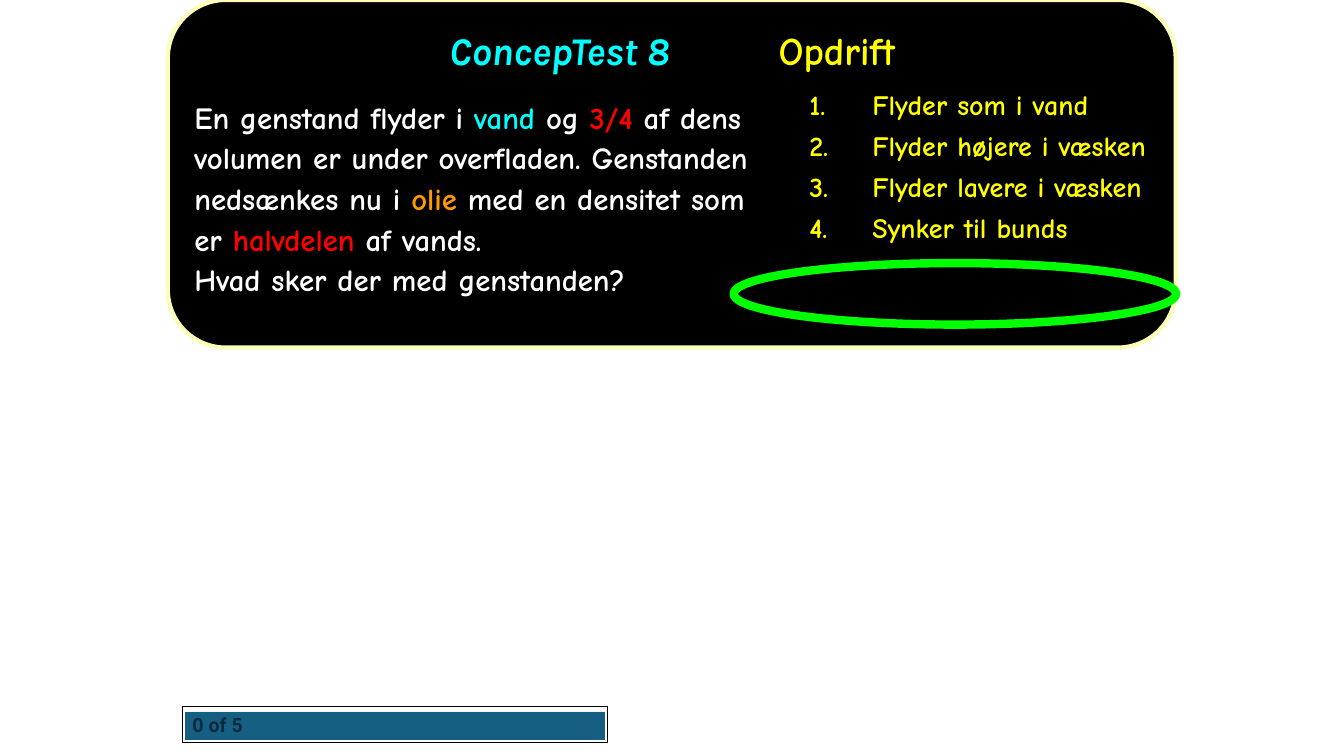
"""Build the ConcepTest 8 slide about buoyancy."""
import pptx
import pptx.dml.color
import pptx.enum.dml
import pptx.enum.shapes
import pptx.enum.text
import pptx.oxml.ns
import pptx.util
import lxml.etree

Cm = pptx.util.Cm
Pt = pptx.util.Pt
RGBColor = pptx.dml.color.RGBColor
SHAPE = pptx.enum.shapes.MSO_SHAPE
ANCHOR = pptx.enum.text.MSO_ANCHOR
AUTO_SIZE = pptx.enum.text.MSO_AUTO_SIZE
LEFT = pptx.enum.text.PP_ALIGN.LEFT

BLACK = RGBColor(0x00, 0x00, 0x00)
WHITE = RGBColor(0xFF, 0xFF, 0xFF)
CREAM = RGBColor(0xFC, 0xFE, 0xB9)
CYAN = RGBColor(0x00, 0xFF, 0xFF)
YELLOW = RGBColor(0xFF, 0xFF, 0x00)
RED = RGBColor(0xFF, 0x00, 0x00)
ORANGE = RGBColor(0xFF, 0x99, 0x00)
GREEN = RGBColor(0x00, 0xFF, 0x00)
TEAL = RGBColor(0x15, 0x60, 0x82)
NAVY = RGBColor(0x0E, 0x28, 0x41)

HEADING = {"name": "Karla", "size": Pt(28), "bold": True, "italic": True}
TOPIC = {"name": "Comic Neue", "size": Pt(28), "bold": True, "italic": False}
QUESTION = {"name": "Comic Neue", "size": Pt(22), "bold": True}
ANSWER = {"name": "Comic Neue", "size": Pt(20), "bold": True}
COUNTER = {"name": "Roboto", "size": Pt(14), "bold": True}


def set_all(target, values):
    for name, value in values.items():
        setattr(target, name, value)


class ConcepTest:
    def __init__(self, deck):
        self.slide = deck.slides.add_slide(deck.slide_layouts[1])

    def add_runs(self, paragraph, runs, **layout):
        set_all(paragraph, {"alignment": LEFT, **layout})
        for text, style, color in runs:
            run = paragraph.add_run()
            run.text = text
            set_all(run.font, style)
            run.font.color.rgb = color

    def add_property(self, parent, tag, **attributes):
        return lxml.etree.SubElement(parent, pptx.oxml.ns.qn(tag), attributes)

    def placeholder(self, index, box, **frame):
        holder = self.slide.placeholders[index]
        set_all(holder, dict(zip(("left", "top", "width", "height"), map(Cm, box))))
        set_all(holder.text_frame, {"auto_size": AUTO_SIZE.NONE, **frame})
        holder.element.getparent().append(holder.element)
        return holder.text_frame

    def title(self, box, heading, topic, inset, tab):
        frame = self.placeholder(0, box, vertical_anchor=ANCHOR.MIDDLE, margin_left=Cm(inset))
        paragraph = frame.paragraphs[0]
        stops = self.add_property(paragraph._p.get_or_add_pPr(), "a:tabLst")
        self.add_property(stops, "a:tab", pos=str(Cm(tab)), algn="l")
        self.add_runs(paragraph, [(heading + "\t", HEADING, CYAN), (topic, TOPIC, YELLOW)],
                      line_spacing=0.9)

    def answers(self, box, choices, indent):
        frame = self.placeholder(1, box, vertical_anchor=ANCHOR.TOP)
        for number, choice in enumerate(choices):
            paragraph = frame.add_paragraph() if number else frame.paragraphs[0]
            properties = paragraph._p.get_or_add_pPr()
            properties.set("marL", str(Cm(indent)))
            properties.set("indent", str(-Cm(indent)))
            self.add_property(properties, "a:buAutoNum", type="arabicPeriod")
            self.add_runs(paragraph, [(choice, ANSWER, YELLOW)], line_spacing=0.8,
                          space_before=Pt(10 if number else 0))

    def question(self, box, paragraphs):
        frame = self.slide.shapes.add_textbox(*map(Cm, box)).text_frame
        set_all(frame, {"word_wrap": True, "auto_size": AUTO_SIZE.SHAPE_TO_FIT_TEXT})
        for number, parts in enumerate(paragraphs):
            paragraph = frame.add_paragraph() if number else frame.paragraphs[0]
            self.add_runs(paragraph, [(text, QUESTION, color) for text, color in parts],
                          line_spacing=1.1)

    def shape(self, kind, box, line=None, width=0, fill=None, shapes=None):
        item = (shapes or self.slide.shapes).add_shape(kind, *map(Cm, box))
        item.shadow.inherit = False
        if fill is None:
            item.fill.background()
        else:
            item.fill.solid()
            item.fill.fore_color.rgb = fill
        if line is None:
            item.line.fill.background()
        else:
            item.line.color.rgb = line
            item.line.width = Pt(width)
        return item

    def counter(self, bar_box, border_box, label):
        shapes = self.slide.shapes.add_group_shape().shapes
        bar = self.shape(SHAPE.RECTANGLE, bar_box, shapes=shapes)
        bar.fill.patterned()
        bar.fill.pattern = pptx.enum.dml.MSO_PATTERN.DARK_VERTICAL
        bar.fill.fore_color.rgb = TEAL
        bar.fill.back_color.rgb = WHITE
        border = self.shape(SHAPE.RECTANGLE, border_box, BLACK, 0.75, shapes=shapes)
        border.text_frame.vertical_anchor = ANCHOR.MIDDLE
        self.add_runs(border.text_frame.paragraphs[0], [(label, COUNTER, NAVY)])


def main():
    deck = pptx.Presentation()
    set_all(deck, {"slide_width": Cm(33.87), "slide_height": Cm(19.05)})
    test = ConcepTest(deck)
    test.shape(SHAPE.ROUNDED_RECTANGLE, (4.23, 0, 25.4, 8.76), CREAM, 3, BLACK)
    test.title((5.5, 0.43, 22.86, 1.78), "ConcepTest 8", "Opdrift", inset=5.82, tab=8.3)
    test.counter((4.65, 17.93, 10.59, 0.71), (4.6, 17.81, 10.72, 0.89), "0 of 5")
    test.question((4.65, 2.26, 15.09, 6.4), [
        [("En genstand flyder i ", WHITE), ("vand", CYAN), (" og ", WHITE), ("3/4 ", RED),
         ("af dens volumen er under overfladen. Genstanden nedsænkes nu i ", WHITE),
         ("olie", ORANGE), (" med en densitet som er ", WHITE),
         ("halvdelen ", RED), ("af vands.", WHITE)],
        [("Hvad sker der med genstanden?", WHITE)],
    ])
    test.answers((20.14, 2.24, 9.5, 6.17), [
        "Flyder som i vand", "Flyder højere i væsken",
        "Flyder lavere i væsken", "Synker til bunds",
    ], indent=1.59)
    test.shape(SHAPE.OVAL, (18.49, 6.63, 11.15, 1.55), GREEN, 6)
    deck.save("out.pptx")


if __name__ == "__main__":
    main()
